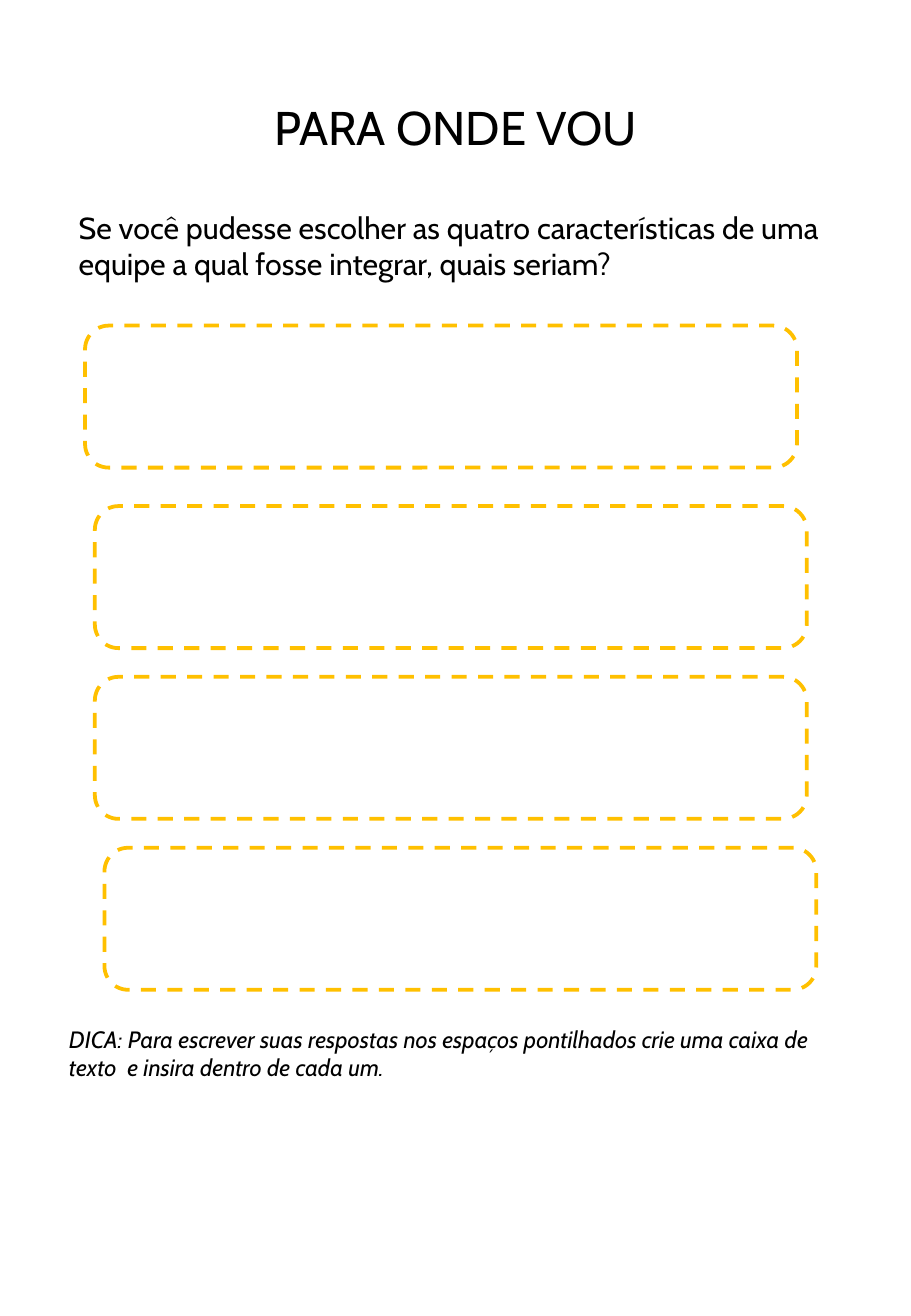
from pptx import Presentation
from pptx.dml.color import RGBColor
from pptx.enum.dml import MSO_LINE
from pptx.enum.shapes import MSO_SHAPE
from pptx.enum.text import MSO_ANCHOR, MSO_AUTO_SIZE, PP_ALIGN
from pptx.util import Pt

ROUNDED = MSO_SHAPE.ROUNDED_RECTANGLE
DASH = MSO_LINE.DASH
MIDDLE, TOP = MSO_ANCHOR.MIDDLE, MSO_ANCHOR.TOP
CENTER, LEFT = PP_ALIGN.CENTER, PP_ALIGN.LEFT
NO_FIT, GROW = MSO_AUTO_SIZE.NONE, MSO_AUTO_SIZE.SHAPE_TO_FIT_TEXT

FONT = "Cabin"
BLACK, AMBER = "000000", "FFC000"
ANSWER_WIDTH, ANSWER_HEIGHT = 422, 84.2


def color(value):
    return RGBColor.from_string(value)


def write(box, text, size=18, italic=False, align=LEFT, anchor=TOP, fit=GROW):
    frame = box.text_frame
    frame.word_wrap = True
    frame.auto_size = fit
    frame.vertical_anchor = anchor
    para = frame.paragraphs[0]
    para.alignment = align
    span = para.add_run()
    span.text = text
    span.font.name = FONT
    span.font.size = Pt(size)
    span.font.italic = italic
    span.font.color.rgb = color(BLACK)


def add_title(page, left, top, width, height, text):
    title = page.shapes.title
    title.left, title.top = Pt(left), Pt(top)
    title.width, title.height = Pt(width), Pt(height)
    write(title, text, size=28, align=CENTER, anchor=MIDDLE, fit=NO_FIT)


def add_text(page, left, top, width, height, text, **style):
    box = page.shapes.add_textbox(Pt(left), Pt(top), Pt(width), Pt(height))
    write(box, text, **style)


def add_answer_space(page, left, top, width, height):
    space = page.shapes.add_shape(ROUNDED, Pt(left), Pt(top), Pt(width), Pt(height))
    space.shadow.inherit = False
    space.fill.background()
    space.line.color.rgb = color(AMBER)
    space.line.width = Pt(2.25)
    space.line.dash_style = DASH


def build_page(deck):
    page = deck.slides.add_slide(deck.slide_layouts[5])

    # Title and question
    add_title(page, 27, 31, 486, 88.5, "PARA ONDE VOU")
    add_text(page, 39.5, 120.2, 456, 51,
             "Se você pudesse escolher as quatro características de uma "
             "equipe a qual fosse integrar, quais seriam?")

    # Four dashed spaces for the answers
    for left, top in [(50.4, 193), (56.2, 300), (56.2, 401.2), (61.9, 502.5)]:
        add_answer_space(page, left, top, ANSWER_WIDTH, ANSWER_HEIGHT)

    # Tip
    add_text(page, 33.8, 604, 456, 41,
             "DICA: Para escrever suas respostas nos espaços pontilhados "
             "crie uma caixa de texto  e insira dentro de cada um.",
             size=14, italic=True)


def main():
    deck = Presentation()
    deck.slide_width, deck.slide_height = Pt(540), Pt(780)
    build_page(deck)
    deck.save("out.pptx")


if __name__ == "__main__":
    main()
